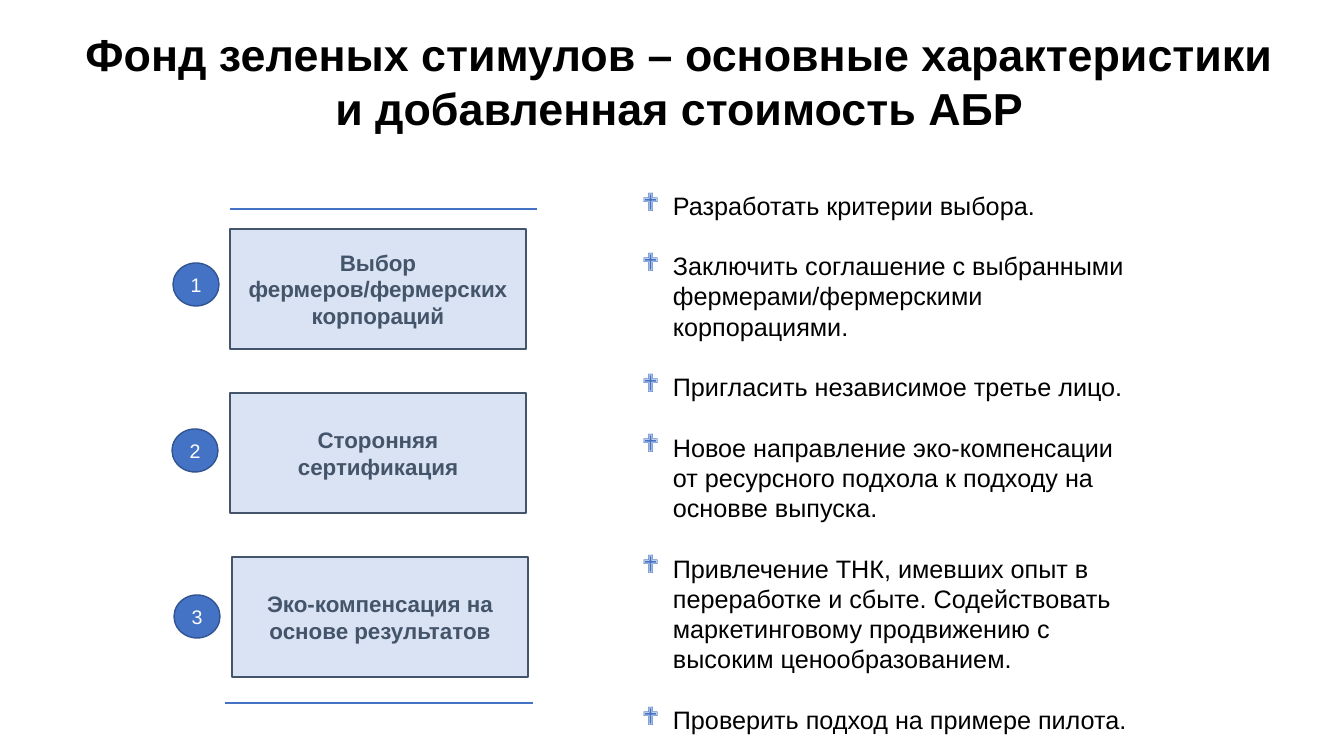
from lxml import etree
from pptx import Presentation
from pptx.dml.color import RGBColor
from pptx.enum.shapes import MSO_CONNECTOR as Link, MSO_SHAPE as Kind
from pptx.enum.text import MSO_ANCHOR as Anchor, PP_ALIGN as Align
from pptx.oxml.ns import qn
from pptx.util import Pt

BLACK = RGBColor(0x00, 0x00, 0x00)
WHITE = RGBColor(0xFF, 0xFF, 0xFF)
BLUE = RGBColor(0x44, 0x72, 0xC4)
NAVY = RGBColor(0x32, 0x54, 0x91)
SLATE = RGBColor(0x44, 0x54, 0x6A)
PALE = RGBColor(0xDA, 0xE3, 0xF3)
SCALE = 914400 / 100.8


def px(*sizes):
    return [round(size * SCALE) for size in sizes]


def write(shape, *lines, size, color, bold=False, align=Align.CENTER,
          anchor=Anchor.MIDDLE, bullet=None, gap=0):
    frame = shape.text_frame
    frame.word_wrap = True
    frame.vertical_anchor = anchor
    for i, text in enumerate(lines):
        para = frame.paragraphs[0] if i == 0 else frame.add_paragraph()
        para.alignment = align
        para.space_before = Pt(gap if i else 0)
        if bullet:
            props = para._p.get_or_add_pPr()
            indent = px(31)[0]
            props.set("marL", str(indent))
            props.set("indent", str(-indent))
            tint = etree.SubElement(props, qn("a:buClr"))
            etree.SubElement(tint, qn("a:srgbClr"), val=str(BLUE))
            etree.SubElement(props, qn("a:buFont"), typeface="Wingdings")
            etree.SubElement(props, qn("a:buChar"), char=bullet)
        run = para.add_run()
        run.text = text
        font = run.font
        font.name, font.size, font.bold = "Arial", Pt(size), bold
        font.color.rgb = color


deck = Presentation()
deck.slide_width, deck.slide_height = px(1344, 756)
slide = deck.slides.add_slide(deck.slide_layouts[6])
shapes = slide.shapes

title = shapes.add_textbox(*px(61, 22, 1237, 119))
write(title, "Фонд зеленых стимулов – основные характеристики и добавленная стоимость АБР",
      size=32, color=BLACK, bold=True, anchor=Anchor.TOP)

notes = shapes.add_textbox(*px(632, 185, 508, 559))
write(notes,
      "Разработать критерии выбора.",
      "Заключить соглашение с выбранными фермерами/фермерскими корпорациями.",
      "Пригласить независимое третье лицо.",
      "Новое направление эко-компенсации от ресурсного подхола к подходу на основве выпуска.",
      "Привлечение ТНК, имевших опыт в переработке и сбыте. Содействовать маркетинговому "
      "продвижению с высоким ценообразованием.",
      "Проверить подход на примере пилота.",
      size=18, color=BLACK, align=Align.LEFT, anchor=Anchor.TOP, bullet="❖", gap=21.6)

steps = [
    ("Выбор фермеров/фермерских корпораций", 230, 173),
    ("Сторонняя сертификация", 230, 172),
    ("Эко-компенсация на основе результатов", 232, 174),
]
for i, (text, left, edge) in enumerate(steps):
    top = 229 + 164 * i
    card = shapes.add_shape(Kind.RECTANGLE, *px(left, top, 296, 120))
    disc = shapes.add_shape(Kind.OVAL, *px(edge, 263 + 166 * i, 46, 43))
    for shape, fill, line in ((card, PALE, SLATE), (disc, BLUE, NAVY)):
        shape.shadow.inherit = False
        shape.fill.solid()
        shape.fill.fore_color.rgb = fill
        shape.line.color.rgb = line
        shape.line.width = Pt(1)
    write(card, text, size=16, color=SLATE, bold=True)
    write(disc, str(i + 1), size=14, color=WHITE)

for left, right, y in ((230, 537, 209), (225, 533, 703)):
    rule = shapes.add_connector(Link.STRAIGHT, *px(left, y, right, y))
    rule.line.color.rgb = BLUE
    rule.line.width = Pt(2)
    etree.SubElement(rule._element.spPr, qn("a:effectLst"))

deck.save("out.pptx")
